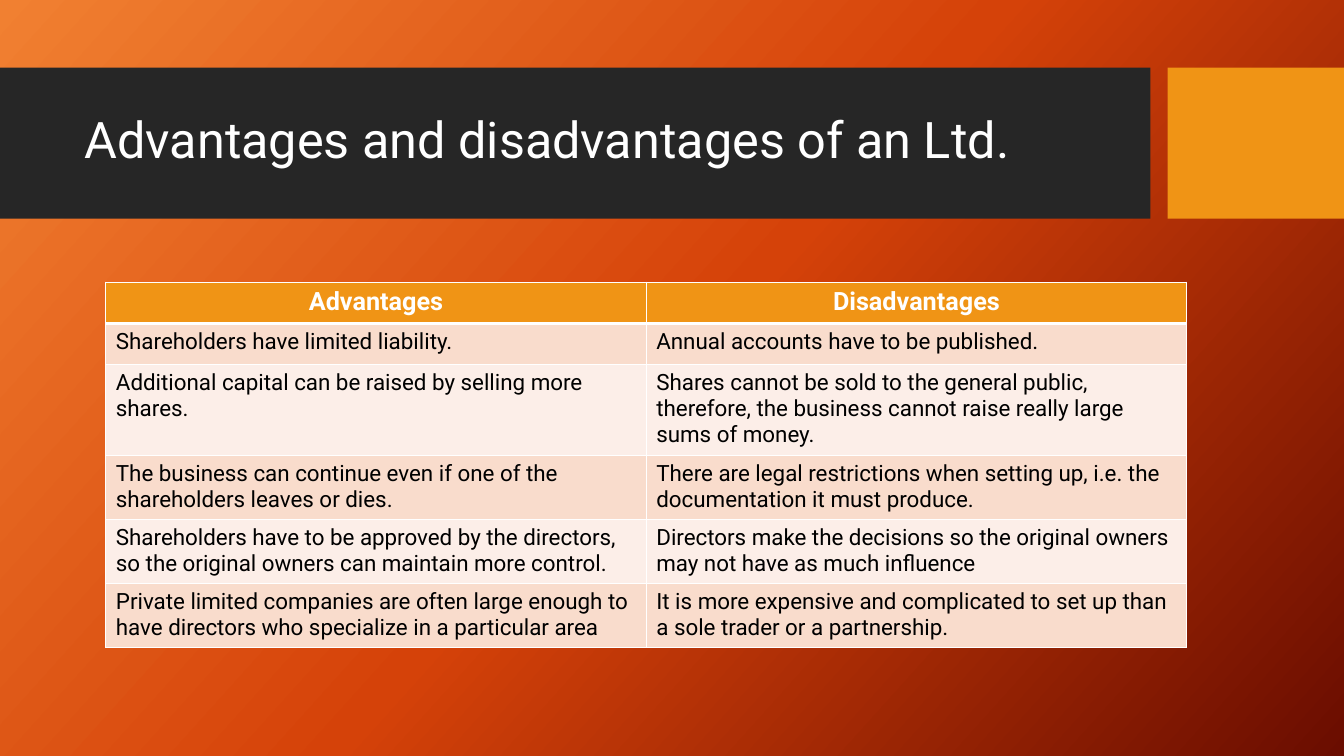
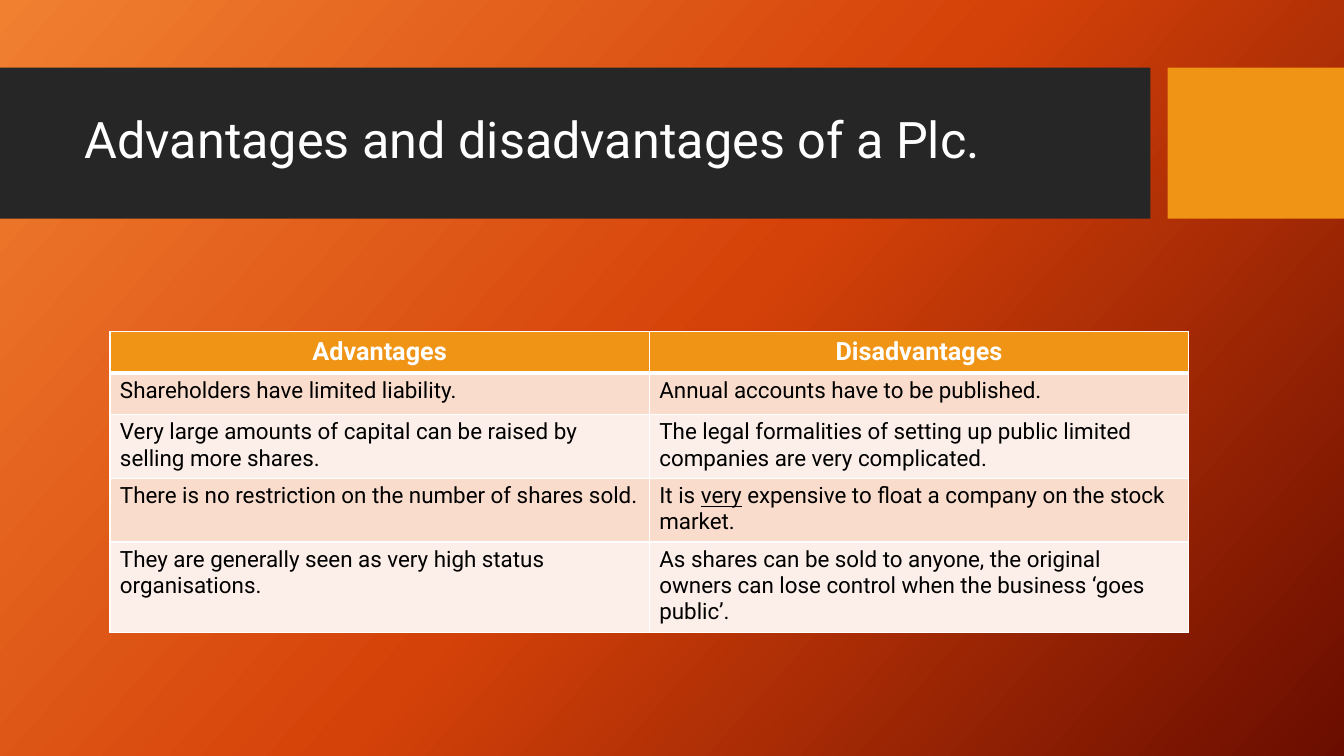
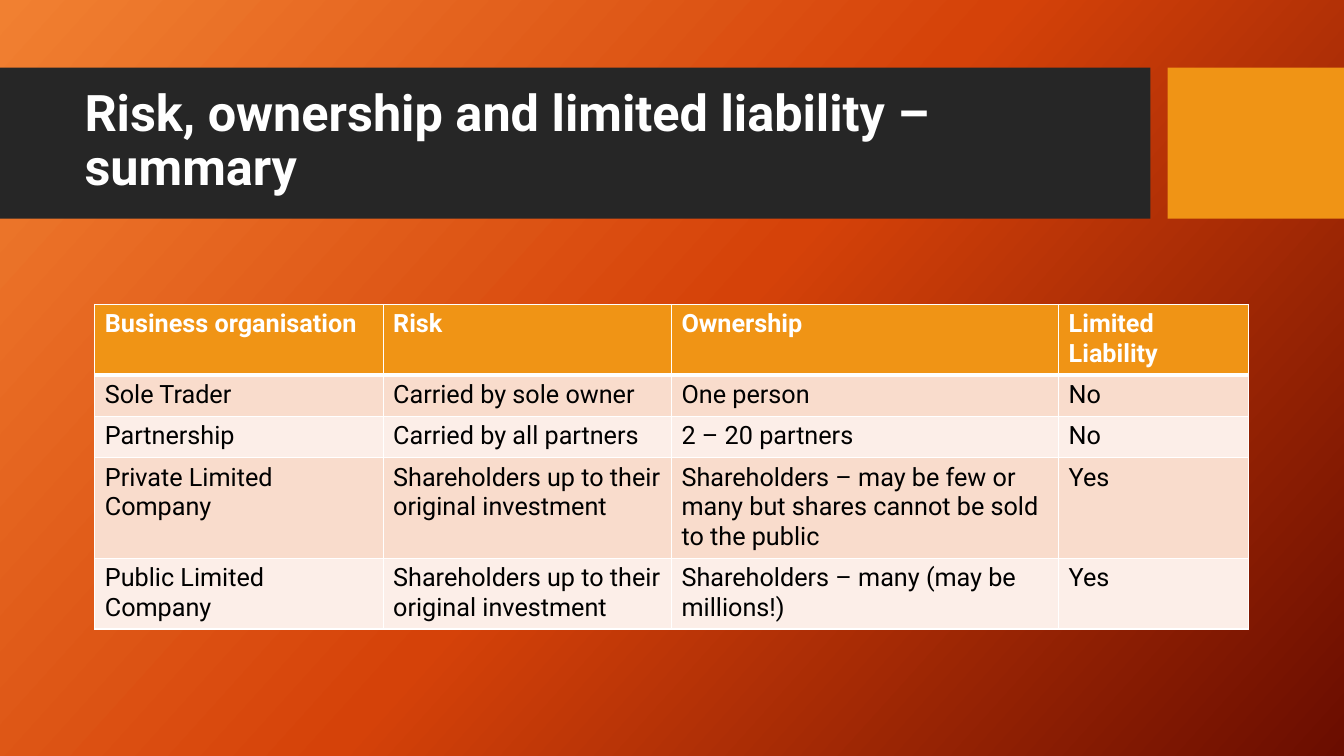
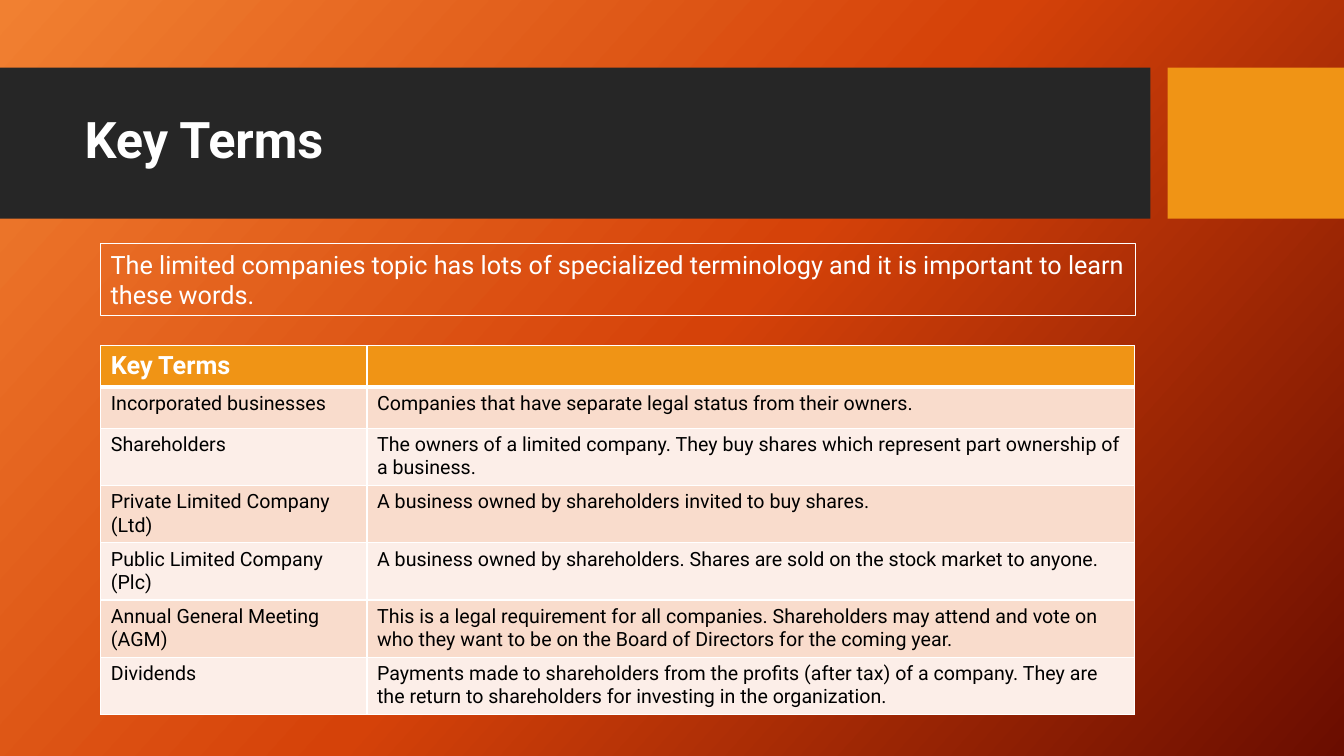
from dataclasses import dataclass

from lxml.etree import SubElement
from pptx import Presentation
from pptx.dml.color import RGBColor
from pptx.enum.shapes import MSO_SHAPE
from pptx.enum.text import MSO_ANCHOR, MSO_AUTO_SIZE, PP_ALIGN
from pptx.oxml import parse_xml
from pptx.oxml.ns import nsdecls, qn
from pptx.util import Inches, Pt

# Content: underscores enclose underlined words, a line break starts a paragraph
SLIDES = [
    {
        "title": "Advantages and disadvantages of an Ltd.",
        "at": (1.05, 2.8), "columns": (5.36, 5.36),
        "body_size": 16, "header_align": PP_ALIGN.CENTER,
        "rows": [
            ("Advantages", "Disadvantages"),
            ("Shareholders have limited liability.",
             "Annual accounts have to be published."),
            ("Additional capital can be raised by selling more shares.",
             "Shares cannot be sold to the general public, therefore, the business "
             "cannot raise really large sums of money."),
            ("The business can continue even if one of the shareholders leaves or dies.",
             "There are legal restrictions when setting up, i.e. the documentation it "
             "must produce."),
            ("Shareholders have to be approved by the directors, so the original owners "
             "can maintain more control.",
             "Directors make the decisions so the original owners may not have as much "
             "influence"),
            ("Private limited companies are often large enough to have directors who "
             "specialize in a particular area",
             "It is more expensive and complicated to set up than a sole trader or a "
             "partnership."),
        ],
    },
    {
        "title": "Advantages and disadvantages of a Plc.",
        "at": (1.09, 3.29), "columns": (5.35, 5.35),
        "body_size": 16, "header_align": PP_ALIGN.CENTER,
        "rows": [
            ("Advantages", "Disadvantages"),
            ("Shareholders have limited liability.",
             "Annual accounts have to be published."),
            ("Very large amounts of capital can be raised by selling more shares.",
             "The legal formalities of setting up public limited companies are very "
             "complicated."),
            ("There is no restriction on the number of shares sold.",
             "It is _very_ expensive to float a company on the stock market."),
            ("They are generally seen as very high status organisations.",
             "As shares can be sold to anyone, the original owners can lose control when "
             "the business ‘goes public’."),
        ],
    },
    {
        "title": "Risk, ownership and limited liability – summary", "title_bold": True,
        "at": (0.94, 3.02), "columns": (2.86, 2.86, 3.84, 1.88), "body_size": 18,
        "rows": [
            ("Business organisation", "Risk", "Ownership", "Limited\nLiability"),
            ("Sole Trader", "Carried by sole owner", "One person", "No"),
            ("Partnership", "Carried by all partners", "2 – 20 partners", "No"),
            ("Private Limited Company", "Shareholders up to their original investment",
             "Shareholders – may be few or many but shares cannot be sold to the public",
             "Yes"),
            ("Public Limited Company", "Shareholders up to their original investment",
             "Shareholders – many (may be millions!)", "Yes"),
        ],
    },
    {
        "title": "Key Terms", "title_bold": True,
        "intro": "The limited companies topic has lots of specialized terminology and it "
                 "is important to learn these words.",
        "at": (1, 3.43), "columns": (2.64, 7.61), "body_size": 14,
        "rows": [
            ("Key Terms", ""),
            ("Incorporated businesses",
             "Companies that have separate legal status from their owners."),
            ("Shareholders",
             "The owners of a limited company. They buy shares which represent part "
             "ownership of a business."),
            ("Private Limited Company (Ltd)",
             "A business owned by shareholders invited to buy shares."),
            ("Public Limited Company (Plc)",
             "A business owned by shareholders. Shares are sold on the stock market to "
             "anyone."),
            ("Annual General Meeting (AGM)",
             "This is a legal requirement for all companies. Shareholders may attend and "
             "vote on who they want to be on the Board of Directors for the coming year."),
            ("Dividends",
             "Payments made to shareholders from the profits (after tax) of a company. "
             "They are the return to shareholders for investing in the organization."),
        ],
    },
]


# Shared look
@dataclass(frozen=True)
class Theme:
    font: str = "Roboto"
    white: str = "FFFFFF"
    black: str = "000000"
    band: str = "262626"
    accent: str = "F09415"
    stripes: tuple = ("F9DCCC", "FCEEE8")
    gradient: tuple = ((0, "F18031"), (50, "D54209"), (100, "6A0D00"))
    gradient_angle: int = 42
    title_size: int = 36
    text_size: int = 18
    row_height: float = 0.41
    thin: int = 1
    thick: int = 3


THEME = Theme()
BANDS = [((0, 0.67, 11.41, 1.5), THEME.band), ((11.58, 0.67, 1.75, 1.5), THEME.accent)]
TITLE_AT = (0.74, 0.82, 10.51, 1.18)
INTRO_AT = (1, 2.42, 10.26, 0.71)


def inches(values):
    return [Inches(value) for value in values]


def write_text(frame, text, size, color, bold=False, **paragraph_format):
    """Fill a text frame, one paragraph a line."""
    font_format = {"name": THEME.font, "size": Pt(size), "bold": bold}
    for line_number, line in enumerate(text.split("\n")):
        para = frame.add_paragraph() if line_number else frame.paragraphs[0]
        for name, value in paragraph_format.items():
            setattr(para, name, value)
        for part_number, part in enumerate(line.split("_")):
            if not part:
                continue
            span = para.add_run()
            span.text = part
            for name, value in font_format.items():
                setattr(span.font, name, value)
            span.font.color.rgb = RGBColor.from_string(color)
            if part_number % 2:
                span.font.underline = True


def set_background(master):
    fill = master.background.fill
    fill.gradient()
    fill.gradient_angle = 360 - THEME.gradient_angle
    stops = next(master.element.iter(qn("a:gsLst")))
    for stop in list(stops):
        stops.remove(stop)
    for percent, color in THEME.gradient:
        stop = SubElement(stops, qn("a:gs"), pos=str(percent * 1000))
        SubElement(stop, qn("a:srgbClr"), val=color)


def add_rectangle(page, at):
    box = page.shapes.add_shape(MSO_SHAPE.RECTANGLE, *inches(at))
    box.shadow.inherit = False
    return box


def add_heading(page, title, bold):
    for at, color in BANDS:
        band = add_rectangle(page, at)
        band.fill.solid()
        band.fill.fore_color.rgb = RGBColor.from_string(color)
        band.line.fill.background()
    frame = page.shapes.add_textbox(*inches(TITLE_AT)).text_frame
    frame.word_wrap = True
    frame.vertical_anchor = MSO_ANCHOR.MIDDLE
    write_text(frame, title, THEME.title_size, THEME.white, bold, line_spacing=0.9)


def add_intro(page, text):
    box = add_rectangle(page, INTRO_AT)
    box.fill.background()
    box.line.color.rgb = RGBColor.from_string(THEME.white)
    box.line.width = Pt(0.75)
    frame_format = {"word_wrap": True, "vertical_anchor": MSO_ANCHOR.TOP,
                    "auto_size": MSO_AUTO_SIZE.SHAPE_TO_FIT_TEXT}
    for name, value in frame_format.items():
        setattr(box.text_frame, name, value)
    write_text(box.text_frame, text, THEME.text_size, THEME.white,
               alignment=PP_ALIGN.LEFT)


def set_borders(cell, **widths):
    """Draw cell edges; the line elements come before the cell's fill."""
    properties = cell._tc.get_or_add_tcPr()
    for position, edge in enumerate("LRTB"):
        width = Pt(widths.get(edge, THEME.thin))
        properties.insert(position, parse_xml(
            f'<a:ln{edge} {nsdecls("a")} w="{width}"><a:solidFill>'
            f'<a:srgbClr val="{THEME.white}"/></a:solidFill></a:ln{edge}>'))


def add_grid(page, content):
    rows, columns = content["rows"], content["columns"]
    size = (sum(columns), THEME.row_height * len(rows))
    table = page.shapes.add_table(
        len(rows), len(columns), *inches(content["at"] + size)).table
    for column, width in zip(table.columns, columns):
        column.width = Inches(width)
    for row_number, texts in enumerate(rows):
        table.rows[row_number].height = Inches(THEME.row_height)
        for column_number, text in enumerate(texts):
            cell = table.cell(row_number, column_number)
            cell.fill.solid()
            if row_number == 0:
                fill, edges = THEME.accent, {"B": THEME.thick}
                write_text(cell.text_frame, text, THEME.text_size, THEME.white, True,
                           alignment=content.get("header_align", PP_ALIGN.LEFT))
            else:
                fill = THEME.stripes[(row_number - 1) % 2]
                edges = {"T": THEME.thick} if row_number == 1 else {}
                write_text(cell.text_frame, text, content["body_size"], THEME.black)
            cell.fill.fore_color.rgb = RGBColor.from_string(fill)
            set_borders(cell, **edges)


def main():
    deck = Presentation()
    deck.slide_width, deck.slide_height = inches((13.33, 7.5))
    set_background(deck.slide_master)
    for content in SLIDES:
        page = deck.slides.add_slide(deck.slide_layouts[6])
        add_heading(page, content["title"], content.get("title_bold", False))
        if "intro" in content:
            add_intro(page, content["intro"])
        add_grid(page, content)
    deck.save("out.pptx")


if __name__ == "__main__":
    main()
